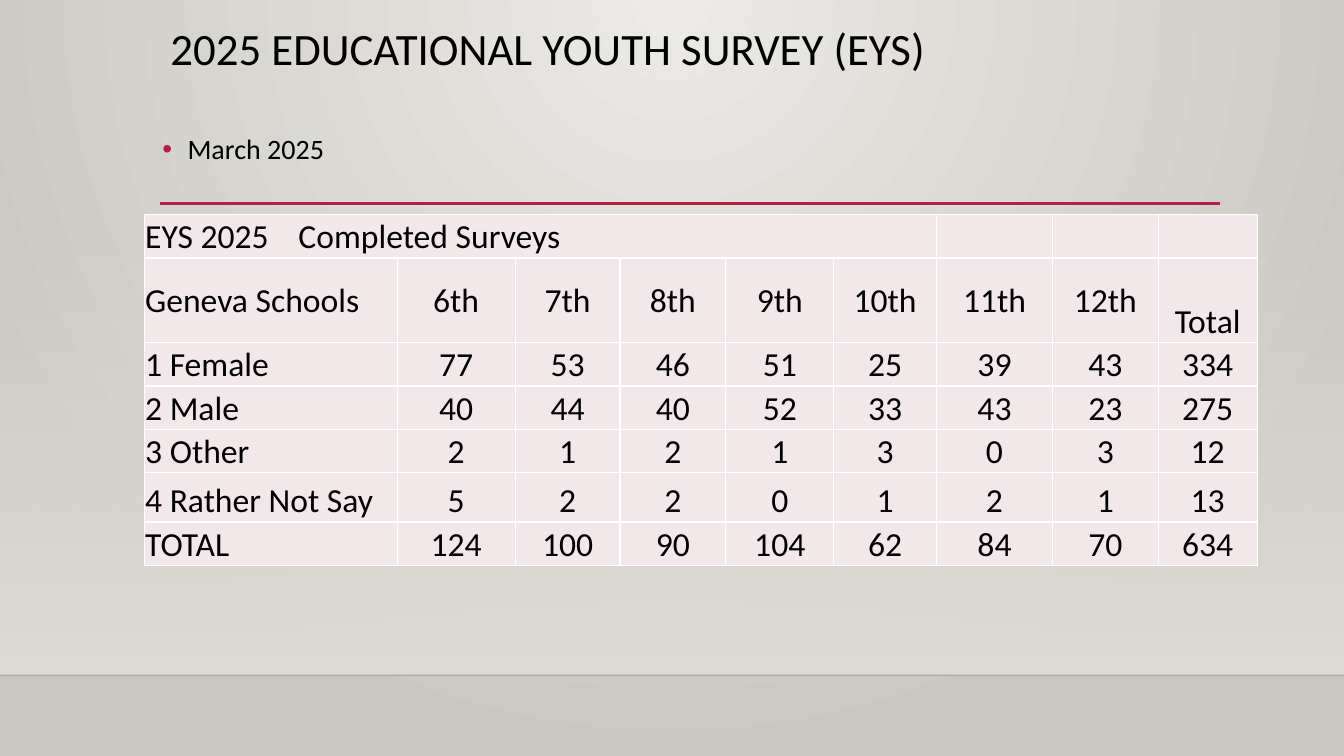
import pptx
import pptx.util
import pptx.dml.color
import pptx.enum.shapes
import pptx.enum.text
from lxml import etree
from pptx.oxml.ns import qn

Inches, Pt = pptx.util.Inches, pptx.util.Pt
RGBColor = pptx.dml.color.RGBColor
ANCHOR = pptx.enum.text.MSO_ANCHOR
ALIGN = pptx.enum.text.PP_ALIGN

BLACK = RGBColor(0x00, 0x00, 0x00)
WHITE = RGBColor(0xFF, 0xFF, 0xFF)
CRIMSON = RGBColor(0xB7, 0x1E, 0x42)
BLUSH = RGBColor(0xF3, 0xE8, 0xE9)
SAND = RGBColor(0xDF, 0xDB, 0xD5)
GLOW = RGBColor(0xEC, 0xEA, 0xE7)
STONE = RGBColor(0xCA, 0xC7, 0xC1)
FLOOR_EDGE = RGBColor(0x00, 0x00, 0x01)

WIDTH, HEIGHT = 13.33, 7.5
FLOOR = 6.7
COLUMNS = [2.51, 1.17, 1.04, 1.05, 1.07, 1.02, 1.15, 1.05, 0.98]
ROWS = [0.43, 0.84, 0.43, 0.43, 0.43, 0.49, 0.43]
SURVEYS = [
    ["EYS 2025\tCompleted Surveys"] + [""] * 8,
    ["Geneva Schools", "6th", "7th", "8th", "9th", "10th", "11th", "12th", "Total"],
    ["1 Female", 77, 53, 46, 51, 25, 39, 43, 334],
    ["2 Male", 40, 44, 40, 52, 33, 43, 23, 275],
    ["3 Other", 2, 1, 2, 1, 3, 0, 3, 12],
    ["4 Rather Not Say", 5, 2, 2, 0, 1, 2, 1, 13],
    ["TOTAL", 124, 100, 90, 104, 62, 84, 70, 634],
]


def add_run(paragraph, text, size):
    run = paragraph.add_run()
    run.text = text
    run.font.name = "Calibri"
    run.font.size = Pt(size)
    run.font.color.rgb = BLACK


def set_alpha(fill_parent, percent):
    color = next(fill_parent.iter(qn("a:srgbClr")))
    etree.SubElement(color, qn("a:alpha"), val=str(percent * 1000))


presentation = pptx.Presentation()
presentation.slide_width = Inches(WIDTH)
presentation.slide_height = Inches(HEIGHT)
slide = presentation.slides.add_slide(presentation.slide_layouts[1])

background = slide.background.fill
background.gradient()
for stop, color in zip(background.gradient_stops, (GLOW, STONE)):
    stop.color.rgb = color
linear = next(slide.element.iter(qn("a:lin")))
radial = etree.Element(qn("a:path"), path="circle")
etree.SubElement(radial, qn("a:fillToRect"), l="43000", t="0", r="43000", b="100000")
linear.getparent().replace(linear, radial)

wall = slide.shapes.add_shape(
    pptx.enum.shapes.MSO_SHAPE.RECTANGLE,
    0, Inches(2.21), Inches(WIDTH), Inches(FLOOR - 2.21))
wall.shadow.inherit = False
wall.line.fill.background()
wall.fill.gradient()
wall.fill.gradient_angle = 270
for stop in wall.fill.gradient_stops:
    stop.color.rgb = SAND
set_alpha(wall.element, 0)

decorations = [wall]
for left, right, top, color, weight in [
    (0, WIDTH, FLOOR, FLOOR_EDGE, 1),
    (1.59, 12.1, 2.02, CRIMSON, 2.5),
]:
    rule = slide.shapes.add_connector(
        pptx.enum.shapes.MSO_CONNECTOR.STRAIGHT,
        Inches(left), Inches(top), Inches(right), Inches(top))
    rule.line.color.rgb = color
    rule.line.width = Pt(weight)
    etree.SubElement(rule.element.spPr, qn("a:effectLst"))
    decorations.append(rule)
set_alpha(decorations[1].element, 20)
for position, shape in enumerate(decorations, start=2):
    shape.element.getparent().insert(position, shape.element)

title, body = slide.shapes.title, slide.placeholders[1]
for placeholder, left, top, height, text, size, spacing in [
    (title, 1.59, 0.22, 1.15, "2025 EDUCATIONAL YOUTH SURVEY (EYS)", 32, 0.9),
    (body, 1.51, 1.19, 3.77, "March 2025", 20, 1.2),
]:
    placeholder.left, placeholder.top = Inches(left), Inches(top)
    placeholder.width, placeholder.height = Inches(10.5), Inches(height)
    frame = placeholder.text_frame
    frame.auto_size = pptx.enum.text.MSO_AUTO_SIZE.NONE
    frame.word_wrap = True
    frame.vertical_anchor = ANCHOR.TOP
    paragraph = frame.paragraphs[0]
    paragraph.alignment = ALIGN.LEFT
    paragraph.line_spacing = spacing
    paragraph.space_before = Pt(0)
    add_run(paragraph, text, size)

properties = body.text_frame.paragraphs[0]._p.get_or_add_pPr()
properties.set("marL", str(Inches(0.25)))
properties.set("indent", str(-Inches(0.25)))
bullet_color = etree.SubElement(properties, qn("a:buClr"))
etree.SubElement(bullet_color, qn("a:srgbClr"), val=str(CRIMSON))
etree.SubElement(properties, qn("a:buFont"), typeface="Arial")
etree.SubElement(properties, qn("a:buChar"), char="•")

table = slide.shapes.add_table(
    len(ROWS), len(COLUMNS), Inches(1.43), Inches(2.13),
    Inches(sum(COLUMNS)), Inches(sum(ROWS))).table
for column, width in zip(table.columns, COLUMNS):
    column.width = Inches(width)
for row, height in zip(table.rows, ROWS):
    row.height = Inches(height)
table.first_row = False
table.horz_banding = False
table.cell(0, 0).merge(table.cell(0, 5))

for row_index, values in enumerate(SURVEYS):
    for column_index, value in enumerate(values):
        cell = table.cell(row_index, column_index)
        cell.fill.solid()
        cell.fill.fore_color.rgb = BLUSH
        cell.margin_left = cell.margin_right = cell.margin_top = Inches(0.01)
        cell.margin_bottom = 0
        centred_row = row_index == 1 and value != "Total"
        cell.vertical_anchor = ANCHOR.MIDDLE if centred_row else ANCHOR.BOTTOM
        cell_properties = cell._tc.get_or_add_tcPr()
        for order, side in enumerate(("lnL", "lnR", "lnT", "lnB")):
            border = etree.Element(qn("a:" + side), w=str(Pt(1)))
            fill = etree.SubElement(border, qn("a:solidFill"))
            etree.SubElement(fill, qn("a:srgbClr"), val=str(WHITE))
            cell_properties.insert(order, border)
        if value == "":
            continue
        paragraph = cell.text_frame.paragraphs[0]
        paragraph.alignment = ALIGN.CENTER if column_index else ALIGN.LEFT
        add_run(paragraph, str(value), 24)

heading = table.cell(0, 0).text_frame.paragraphs[0]
tab_list = etree.SubElement(heading._p.get_or_add_pPr(), qn("a:tabLst"))
etree.SubElement(tab_list, qn("a:tab"), pos=str(Inches(1.52)), algn="l")

presentation.save("out.pptx")
